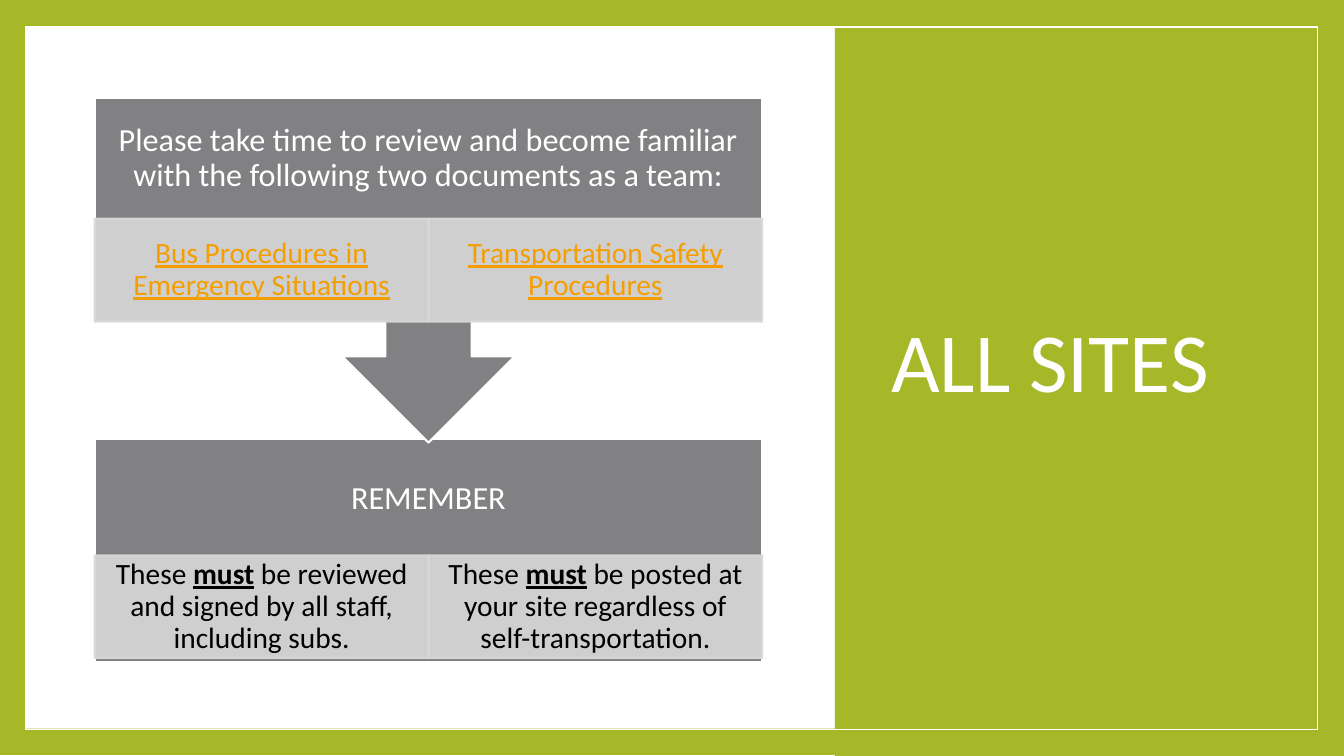
"""Build the ALL SITES slide: two document blocks beside a green title panel."""
from dataclasses import dataclass

from lxml.etree import SubElement
from pptx import Presentation
from pptx.dml.color import RGBColor
from pptx.enum.shapes import MSO_SHAPE
from pptx.enum.text import MSO_ANCHOR, PP_ALIGN
from pptx.oxml.ns import qn
from pptx.util import Inches, Pt


@dataclass(frozen=True)
class Theme:
    green: str = "A6B727"
    white: str = "FFFFFF"
    grey: str = "818183"
    pale: str = "D8D8D9"
    link: str = "F59E00"
    black: str = "000000"
    font: str = "Calibri"
    title: int = 60
    header: int = 23
    cell: int = 21


theme = Theme()
prs = Presentation()
prs.slide_width, prs.slide_height = Inches(13.33), Inches(7.5)
s = prs.slides.add_slide(prs.slide_layouts[6])


def add_box(box, fill=None, line=None, width=1, kind=MSO_SHAPE.RECTANGLE, alpha=None):
    sp = s.shapes.add_shape(kind, *map(Inches, box))
    sp.shadow.inherit = False
    for part, color in ((sp.fill, fill), (sp.line.fill, line)):
        if color is None:
            part.background()
            continue
        part.solid()
        part.fore_color.rgb = RGBColor.from_string(color)
    if line:
        sp.line.width = Pt(width)
    if alpha:
        for clr in sp._element.spPr.iter(qn("a:srgbClr")):
            SubElement(clr, qn("a:alpha")).set("val", str(alpha * 1000))
    return sp


def write(sp, runs, size, color, align, insets):
    tf = sp.text_frame
    frame = {"word_wrap": True, "vertical_anchor": MSO_ANCHOR.MIDDLE,
             "margin_left": Inches(insets[0]), "margin_right": Inches(insets[0]),
             "margin_top": Inches(insets[1]), "margin_bottom": Inches(insets[1])}
    for name, value in frame.items():
        setattr(tf, name, value)
    p = tf.paragraphs[0]
    p.alignment, p.line_spacing = align, 0.9
    for text, style in runs:
        r = p.add_run()
        r.text = text
        r.font.color.rgb = RGBColor.from_string(color)
        for name, value in {"name": theme.font, "size": Pt(size), **style}.items():
            setattr(r.font, name, value)


add_box((0, -0.01, 13.33, 7.5), theme.green)
add_box((0.25, 0.26, 12.82, 6.97), theme.white)
add_box((8.28, 0, 5.05, 7.5), theme.green)
title = s.shapes.add_textbox(*map(Inches, (8.74, 0.67, 3.91, 5.91)))
write(title, [("ALL SITES", {})], theme.title, theme.white, PP_ALIGN.LEFT, (0.1, 0.05))
add_box((0.25, 0.27, 12.82, 6.97), line=theme.white)

LEFT, WIDTH, HEADER_H, CELL_H = 0.94, 6.62, 1.2, 1.02
under = {"underline": True}
must = ("must", {"bold": True, "underline": True})
blocks = [
    (MSO_SHAPE.RECTANGLE, 4.35, 2.22, 5.51, "REMEMBER", theme.black,
     [[("These ", {}), must, (" be reviewed and signed by all staff, including subs.", {})],
      [("These ", {}), must,
       (" be posted at your site regardless of self-transportation.", {})]]),
    (MSO_SHAPE.DOWN_ARROW_CALLOUT, 0.97, 3.42, 2.17,
     "Please take time to review and become familiar with the following "
     "two documents as a team:", theme.link,
     [[("Bus Procedures in Emergency Situations", under)],
      [("Transportation Safety Procedures", under)]]),
]
for kind, top, height, cell_top, header, color, cells in blocks:
    add_box((LEFT, top, WIDTH, height), theme.grey, theme.white, 1.5, kind)
    tb = s.shapes.add_textbox(*map(Inches, (LEFT, top, WIDTH, HEADER_H)))
    write(tb, [(header, {})], theme.header, theme.white, PP_ALIGN.CENTER, (0.18, 0.18))
    cell_w = WIDTH / len(cells)
    for i, runs in enumerate(cells):
        sp = add_box((LEFT + i * cell_w, cell_top, cell_w, CELL_H),
                     theme.pale, theme.pale, 1.5, alpha=90)
        write(sp, runs, theme.cell, color, PP_ALIGN.CENTER, (0.16, 0.03))

prs.save("out.pptx")
